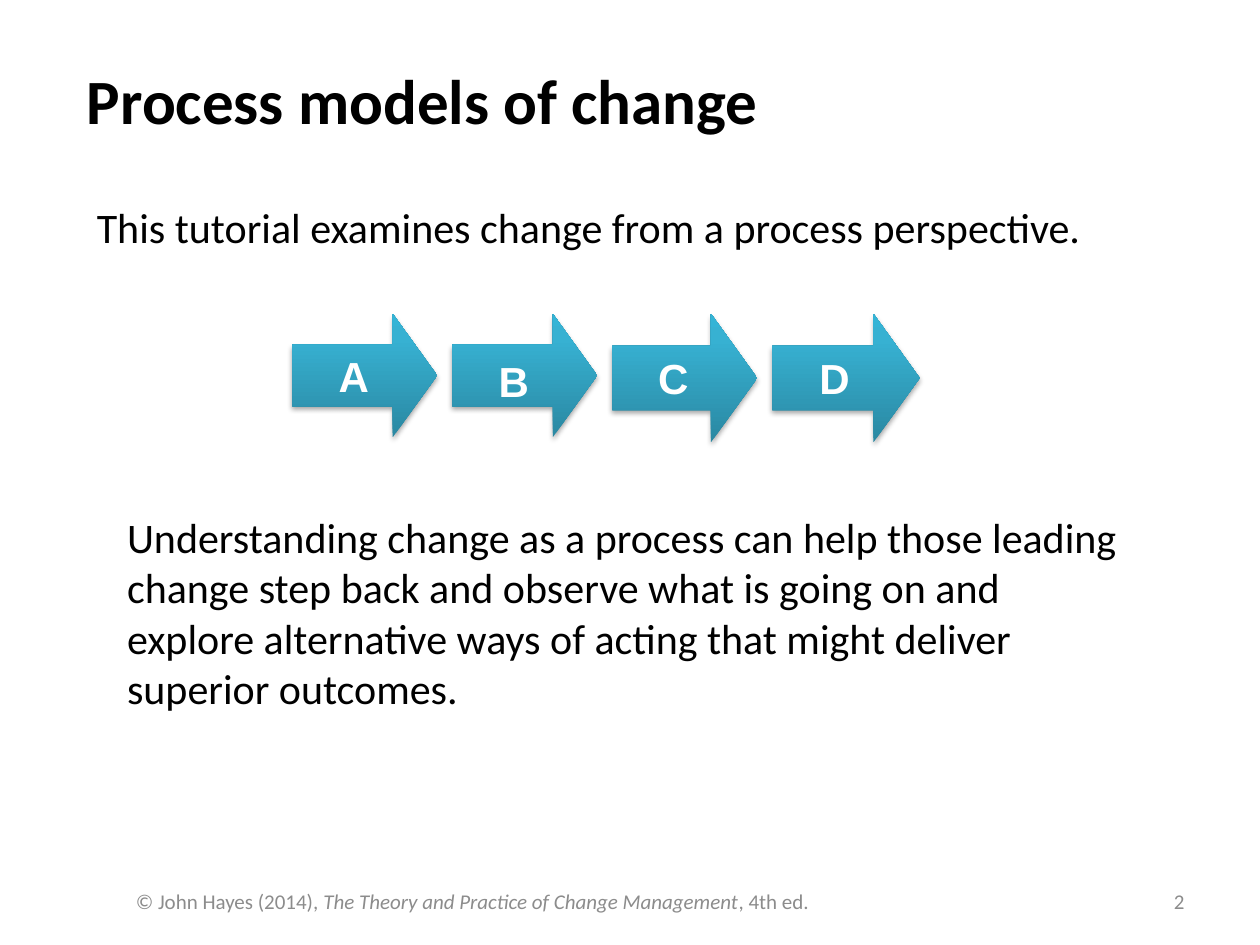
"""Build the slide on process models of change."""
from lxml.etree import SubElement
from pptx import Presentation
from pptx.dml.color import RGBColor
from pptx.enum.shapes import MSO_SHAPE
from pptx.enum.text import MSO_ANCHOR as Anchor, MSO_AUTO_SIZE as AutoSize, PP_ALIGN as Align
from pptx.oxml.ns import qn
from pptx.util import Inches, Pt

BLACK = RGBColor(0x00, 0x00, 0x00)
WHITE = RGBColor(0xFF, 0xFF, 0xFF)
GREY = RGBColor(0x8C, 0x8C, 0x8C)
TEAL_STOPS = [
    (0, RGBColor(0x2A, 0x88, 0xA2)),
    (80, RGBColor(0x37, 0xB1, 0xD2)),
    (100, RGBColor(0x34, 0xB4, 0xD6)),
]

TITLE = "Process models of change"
TITLE_BOX = (0.59, 0.44, 7.01, 0.71)
STATEMENTS = [
    ("This tutorial examines change from a process perspective.", (0.67, 1.55, 8.43, 0.5)),
    ("Understanding change as a process can help those leading change step back and "
     "observe what is going on and explore alternative ways of acting that might "
     "deliver superior outcomes.", (0.91, 4.01, 8.11, 2.02)),
]
CITATION = [
    ("© John Hayes (2014), ", False),
    ("The Theory and Practice of Change Management", True),
    (", 4th ed.", False),
]
CITATION_BOX = (0.98, 6.95, 7.64, 0.4)
PAGE_BOX = (7.17, 6.95, 2.33, 0.4)
STAGES = [("A", 1.15, 0.98, 0.05), ("B", 1.15, 0.98, 0.13),
          ("C", 1.15, 1.02, 0.05), ("D", 1.17, 1.02, 0.05)]
STAGE_LEFT, STAGE_TOP, STAGE_STEP = 2.32, 2.49, 1.27


def write(frame, text, size=24, font="Calibri", color=BLACK, bold=False,
          align=Align.LEFT, anchor=Anchor.TOP):
    """Fill a frame with a string or with (string, italic) pairs."""
    frame.word_wrap = True
    frame.auto_size = AutoSize.NONE
    frame.vertical_anchor = anchor
    paragraph = frame.paragraphs[0]
    paragraph.alignment = align
    for part, italic in [(text, False)] if isinstance(text, str) else text:
        run = paragraph.add_run()
        run.text = part
        run.font.name, run.font.size = font, Pt(size)
        run.font.bold, run.font.italic = bold, italic
        run.font.color.rgb = color


def add_text(slide, text, box, **style):
    write(slide.shapes.add_textbox(*map(Inches, box)).text_frame, text, **style)


def shade(arrow):
    """Give an arrow its upward gradient and soft shadow."""
    arrow.fill.gradient()
    arrow.fill.gradient_angle = 90
    stops = arrow._element.spPr.find(qn("a:gradFill")).find(qn("a:gsLst"))
    for stop in list(stops):
        stops.remove(stop)
    for position, color in TEAL_STOPS:
        stop = SubElement(stops, qn("a:gs"), pos=str(position * 1000))
        SubElement(stop, qn("a:srgbClr"), val=str(color))
    arrow.line.fill.background()
    arrow.shadow.inherit = False
    effects = arrow._element.spPr.find(qn("a:effectLst"))
    shadow = SubElement(effects, qn("a:outerShdw"), blurRad=str(Pt(3.1)), dist=str(Pt(1.8)),
                        dir="5400000", rotWithShape="0")
    tint = SubElement(shadow, qn("a:srgbClr"), val=str(BLACK))
    SubElement(tint, qn("a:alpha"), val="35000")


def add_stages(slide):
    group = slide.shapes.add_group_shape()
    for index, (letter, width, height, top_margin) in enumerate(STAGES):
        box = (STAGE_LEFT + index * STAGE_STEP, STAGE_TOP, width, height)
        arrow = group.shapes.add_shape(MSO_SHAPE.RIGHT_ARROW, *map(Inches, box))
        arrow.adjustments[0], arrow.adjustments[1] = 0.5, 0.36
        shade(arrow)
        arrow.text_frame.margin_top = Inches(top_margin)
        write(arrow.text_frame, letter, font="Arial", color=WHITE, bold=True,
              align=Align.CENTER, anchor=Anchor.MIDDLE)


def main():
    deck = Presentation()
    deck.slide_width, deck.slide_height = Inches(10), Inches(7.5)
    slide = deck.slides.add_slide(deck.slide_layouts.get_by_name("Title Only"))
    title = slide.shapes.title
    title.left, title.top, title.width, title.height = map(Inches, TITLE_BOX)
    write(title.text_frame, TITLE, size=36, bold=True)
    add_stages(slide)
    for statement, box in STATEMENTS:
        add_text(slide, statement, box)
    footer = dict(size=12, color=GREY, anchor=Anchor.MIDDLE)
    add_text(slide, "2", PAGE_BOX, align=Align.RIGHT, **footer)
    add_text(slide, CITATION, CITATION_BOX, **footer)
    deck.save("out.pptx")


if __name__ == "__main__":
    main()
